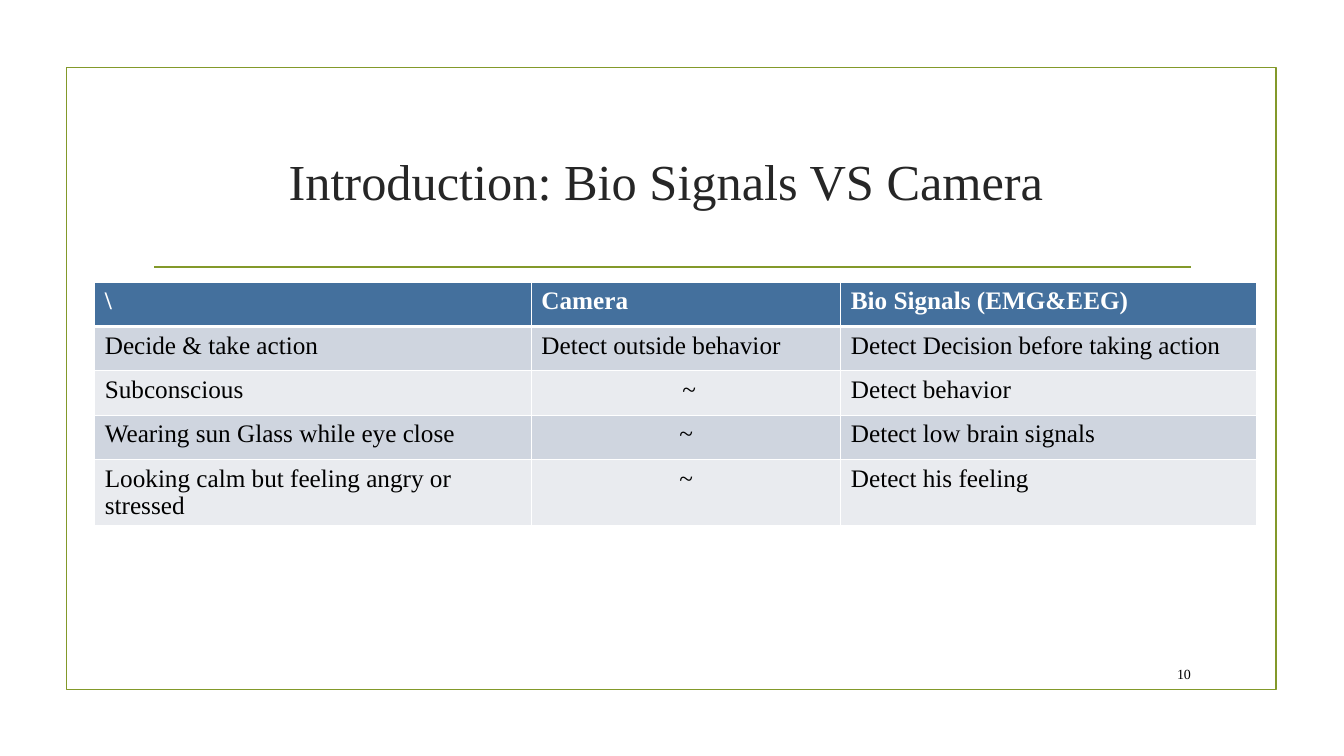
from lxml.etree import SubElement
from pptx import Presentation
from pptx.dml.color import RGBColor
from pptx.enum.shapes import MSO_CONNECTOR, MSO_SHAPE
from pptx.enum.text import MSO_ANCHOR, PP_ALIGN
from pptx.oxml.ns import qn
from pptx.util import Inches, Pt

FONT = "Times New Roman"
OLIVE = RGBColor(0x83, 0x99, 0x2A)
CHARCOAL = RGBColor(0x26, 0x26, 0x26)
BLACK = RGBColor(0x00, 0x00, 0x00)
WHITE = RGBColor(0xFF, 0xFF, 0xFF)
HEADER_BLUE = RGBColor(0x44, 0x70, 0x9D)
BAND_DARK = RGBColor(0xCF, 0xD5, 0xDF)
BAND_LIGHT = RGBColor(0xE9, 0xEB, 0xEF)

TITLE = "Introduction: Bio Signals VS Camera "
PAGE_NUMBER = "10"
COLUMN_WIDTHS = (4.33, 3.07, 4.12)
ROW_HEIGHT = 0.44
COMPARISON = (
    ("\\", "Camera", "Bio Signals (EMG&EEG)"),
    ("Decide & take action", "Detect outside behavior", "Detect Decision before taking action"),
    ("Subconscious", " ~", "Detect behavior"),
    ("Wearing sun Glass while eye close", "~", "Detect low brain signals"),
    ("Looking calm but feeling angry or stressed", "~", "Detect his feeling"),
)


def write(text_frame, text, size, color, align=PP_ALIGN.LEFT, bold=False):
    """Write one formatted run into the first paragraph."""
    paragraph = text_frame.paragraphs[0]
    paragraph.alignment = align
    run = paragraph.add_run()
    run.text = text
    run.font.name = FONT
    run.font.size = Pt(size)
    run.font.bold = bold
    run.font.color.rgb = color


def add_frame(slide):
    """Draw the olive frame and the rule under the title."""
    frame = slide.shapes.add_shape(
        MSO_SHAPE.RECTANGLE, Inches(0.66), Inches(0.67), Inches(12), Inches(6.17))
    frame.shadow.inherit = False
    frame.fill.background()
    rule = slide.shapes.add_connector(
        MSO_CONNECTOR.STRAIGHT, Inches(1.53), Inches(2.65), Inches(11.81), Inches(2.65))
    SubElement(rule.element.spPr, qn("a:effectLst"))
    for outline in (frame.line, rule.line):
        outline.color.rgb = OLIVE
        outline.width = Pt(1.25)


def place_title(slide):
    """Position and fill the title placeholder."""
    title = slide.shapes.title
    title.left, title.top = Inches(1.42), Inches(1.07)
    title.width, title.height = Inches(10.5), Inches(1.43)
    title.text_frame.vertical_anchor = MSO_ANCHOR.MIDDLE
    write(title.text_frame, TITLE, 36, CHARCOAL, PP_ALIGN.CENTER)


def set_borders(cell, widths):
    """Give a cell white borders, with widths in points by side."""
    properties = cell._tc.get_or_add_tcPr()
    for side, width in widths.items():
        border = SubElement(properties, qn(f"a:ln{side}"), w=str(Pt(width)))
        fill = SubElement(border, qn("a:solidFill"))
        SubElement(fill, qn("a:srgbClr"), val=str(WHITE))


def format_cell(cell, text, row):
    """Write and colour a cell according to its row."""
    is_header = row == 0
    set_borders(cell, {"L": 1, "R": 1, "T": 3 if row == 1 else 1, "B": 3 if is_header else 1})
    cell.fill.solid()
    band = BAND_DARK if row % 2 else BAND_LIGHT
    cell.fill.fore_color.rgb = HEADER_BLUE if is_header else band
    align = PP_ALIGN.CENTER if text.strip() == "~" else PP_ALIGN.LEFT
    write(cell.text_frame, text, 18, WHITE if is_header else BLACK, align, is_header)


def add_comparison(slide):
    """Build the table that compares camera and bio signals."""
    table = slide.shapes.add_table(
        len(COMPARISON), len(COLUMN_WIDTHS), Inches(0.94), Inches(2.8),
        Inches(sum(COLUMN_WIDTHS)), Inches(ROW_HEIGHT * len(COMPARISON))).table
    for column, width in zip(table.columns, COLUMN_WIDTHS):
        column.width = Inches(width)
    for row, texts in enumerate(COMPARISON):
        table.rows[row].height = Inches(ROW_HEIGHT)
        for column, text in enumerate(texts):
            format_cell(table.cell(row, column), text, row)


def add_page_number(slide):
    """Add the page number at the lower right."""
    box = slide.shapes.add_textbox(Inches(11.32), Inches(6.53), Inches(0.59), Inches(0.31))
    box.text_frame.word_wrap = True
    box.text_frame.vertical_anchor = MSO_ANCHOR.MIDDLE
    write(box.text_frame, PAGE_NUMBER, 10, BLACK, PP_ALIGN.RIGHT)


def main():
    """Build and save the slide."""
    deck = Presentation()
    deck.slide_width, deck.slide_height = Inches(13.33), Inches(7.5)
    slide = deck.slides.add_slide(deck.slide_layouts[5])
    add_frame(slide)
    place_title(slide)
    add_comparison(slide)
    add_page_number(slide)
    deck.save("out.pptx")


if __name__ == "__main__":
    main()
